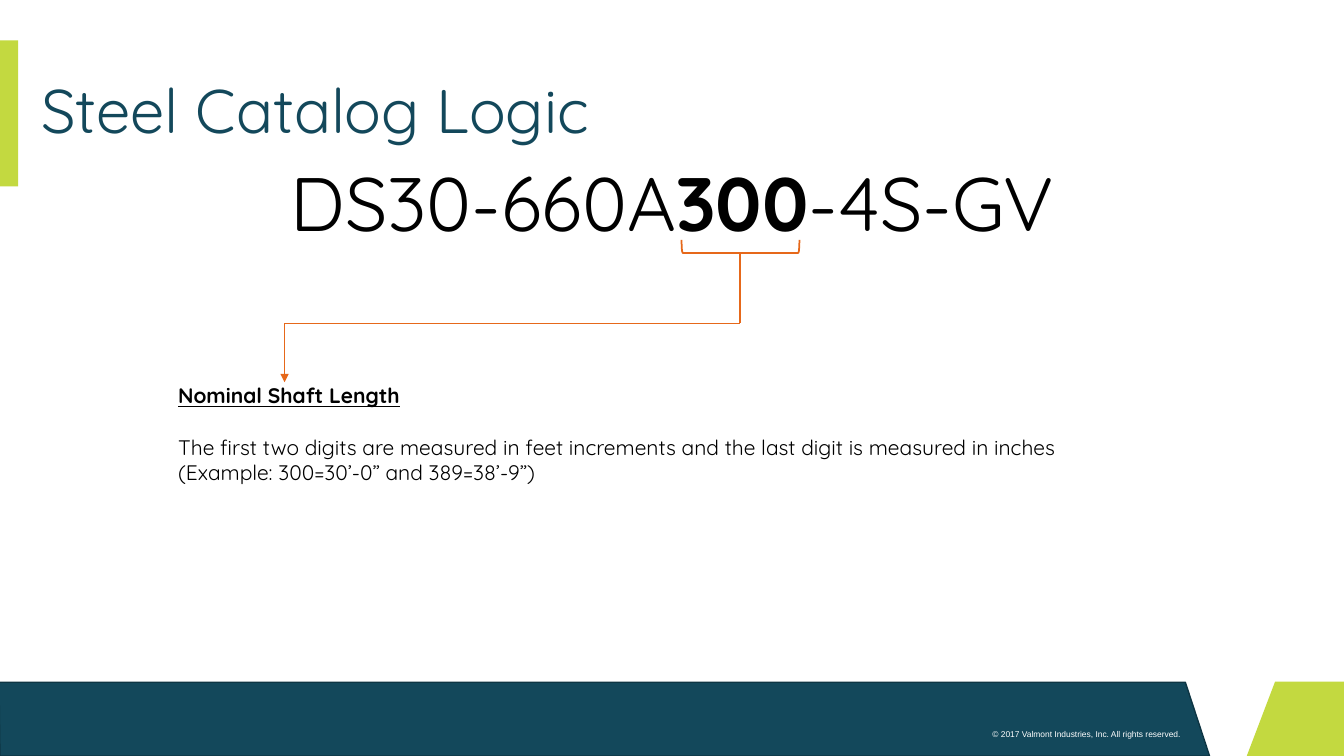
import pptx
import pptx.dml.color
import pptx.enum.shapes
import pptx.enum.text
import pptx.util
from lxml import etree

Pt = pptx.util.Pt
SHAPE = pptx.enum.shapes.MSO_SHAPE
ALIGN = pptx.enum.text.PP_ALIGN
ANCHOR = pptx.enum.text.MSO_ANCHOR
AUTO_SIZE = pptx.enum.text.MSO_AUTO_SIZE
NAVY, NAVY_EDGE, LIME, ORANGE = "13485B", "0E3543", "C3D940", "E6681A"
BLACK, WHITE = "000000", "FFFFFF"
A_NS = "http://schemas.openxmlformats.org/drawingml/2006/main"


def rgb(value):
    return pptx.dml.color.RGBColor.from_string(value)


class SlideBuilder:
    font = "Quicksand"
    line_width = 1.25

    def __init__(self, slide):
        self.s = slide

    def add_run(self, p, text, size, color=BLACK, font=None, bold=False, underline=False):
        r = p.add_run()
        r.text = text
        r.font.name = font or self.font
        r.font.size = Pt(size)
        r.font.color.rgb = rgb(color)
        r.font.bold = bold
        r.font.underline = underline

    def paint(self, sp, fill=None, line=None, width=None):
        sp.shadow.inherit = False
        if fill:
            sp.fill.solid()
            sp.fill.fore_color.rgb = rgb(fill)
        else:
            sp.fill.background()
        if line:
            sp.line.color.rgb = rgb(line)
            sp.line.width = Pt(width or self.line_width)
        else:
            sp.line.fill.background()

    def title(self, text, x, y, w, h):
        sp = self.s.shapes.title
        sp.left, sp.top, sp.width, sp.height = Pt(x), Pt(y), Pt(w), Pt(h)
        tf = sp.text_frame
        tf.auto_size = AUTO_SIZE.NONE
        tf.vertical_anchor = ANCHOR.MIDDLE
        p = tf.paragraphs[0]
        p.alignment = ALIGN.LEFT
        p.line_spacing = 0.9
        self.add_run(p, text, 44, NAVY)

    def text(self, x, y, w, h, paragraphs, align=ALIGN.LEFT, gap=0):
        """Add a text box; each paragraph is a list of (text, run style) pairs."""
        tf = self.s.shapes.add_textbox(Pt(x), Pt(y), Pt(w), Pt(h)).text_frame
        tf.word_wrap = True
        tf.auto_size = AUTO_SIZE.SHAPE_TO_FIT_TEXT
        for i, runs in enumerate(paragraphs):
            p = tf.add_paragraph() if i else tf.paragraphs[0]
            p.alignment = align
            p.space_before = Pt(gap if i else 0)
            for text, style in runs:
                self.add_run(p, text, **style)

    def shape(self, kind, x, y, w, h, rotation=0, **style):
        sp = self.s.shapes.add_shape(kind, Pt(x), Pt(y), Pt(w), Pt(h))
        sp.rotation = rotation
        self.paint(sp, **style)

    def polygon(self, points, **style):
        start, *rest = [(Pt(x), Pt(y)) for x, y in points]
        fb = self.s.shapes.build_freeform(*start)
        fb.add_line_segments(rest, close=True)
        self.paint(fb.convert_to_shape(), **style)

    def line(self, start, end, arrow=False):
        ends = [Pt(v) for v in start + end]
        cx = self.s.shapes.add_connector(pptx.enum.shapes.MSO_CONNECTOR.STRAIGHT, *ends)
        cx.line.color.rgb = rgb(ORANGE)
        cx.line.width = Pt(self.line_width)
        if arrow:
            etree.SubElement(cx.line._get_or_add_ln(), f"{{{A_NS}}}tailEnd", type="triangle")
        etree.SubElement(cx._element.spPr, f"{{{A_NS}}}effectLst")


def main():
    prs = pptx.Presentation()
    prs.slide_width, prs.slide_height = Pt(960), Pt(540)
    b = SlideBuilder(prs.slides.add_slide(prs.slide_layouts[5]))

    b.polygon([(0, 540), (-0.7, 487.4), (846.7, 487.4), (864, 540)],
              fill=NAVY, line=NAVY_EDGE, width=1)
    b.polygon([(960, 487), (910.8, 487), (890.6, 540), (960, 540)], fill=LIME)
    b.shape(SHAPE.RECTANGLE, 0, 28.8, 13, 104.4, fill=LIME)
    b.text(670.3, 517, 180, 14.4,
           [[("© 2017 Valmont Industries, Inc. All rights reserved.",
              dict(size=6, color=WHITE, font="Arial"))]], align=ALIGN.RIGHT)
    b.title("Steel Catalog Logic", 22.3, 28.8, 937.7, 104.4)

    b.text(195.8, 108, 568.8, 72.7,
           [[("DS30-660A", dict(size=54)),
             ("300", dict(size=54, bold=True)),
             ("-4S-GV", dict(size=54))]], align=ALIGN.CENTER)
    b.text(120.2, 270, 678.2, 80,
           [[("Nominal Shaft Length", dict(size=15, bold=True, underline=True))],
            [("The first two digits are measured in feet increments and the last digit "
              "is measured in inches (Example: 300=30’-0” and 389=38’-9”)", dict(size=15))]],
           gap=18.75)

    b.shape(SHAPE.RIGHT_BRACKET, 524.2, 133.9, 9.4, 84.2, rotation=90, line=ORANGE)
    label_x, code_x, bend_y = 203.3, 528.5, 231
    b.line((label_x, bend_y), (label_x, 273), arrow=True)
    b.line((code_x, 180.7), (code_x, bend_y))
    b.line((label_x, bend_y), (code_x, bend_y))

    prs.save("out.pptx")


if __name__ == "__main__":
    main()
